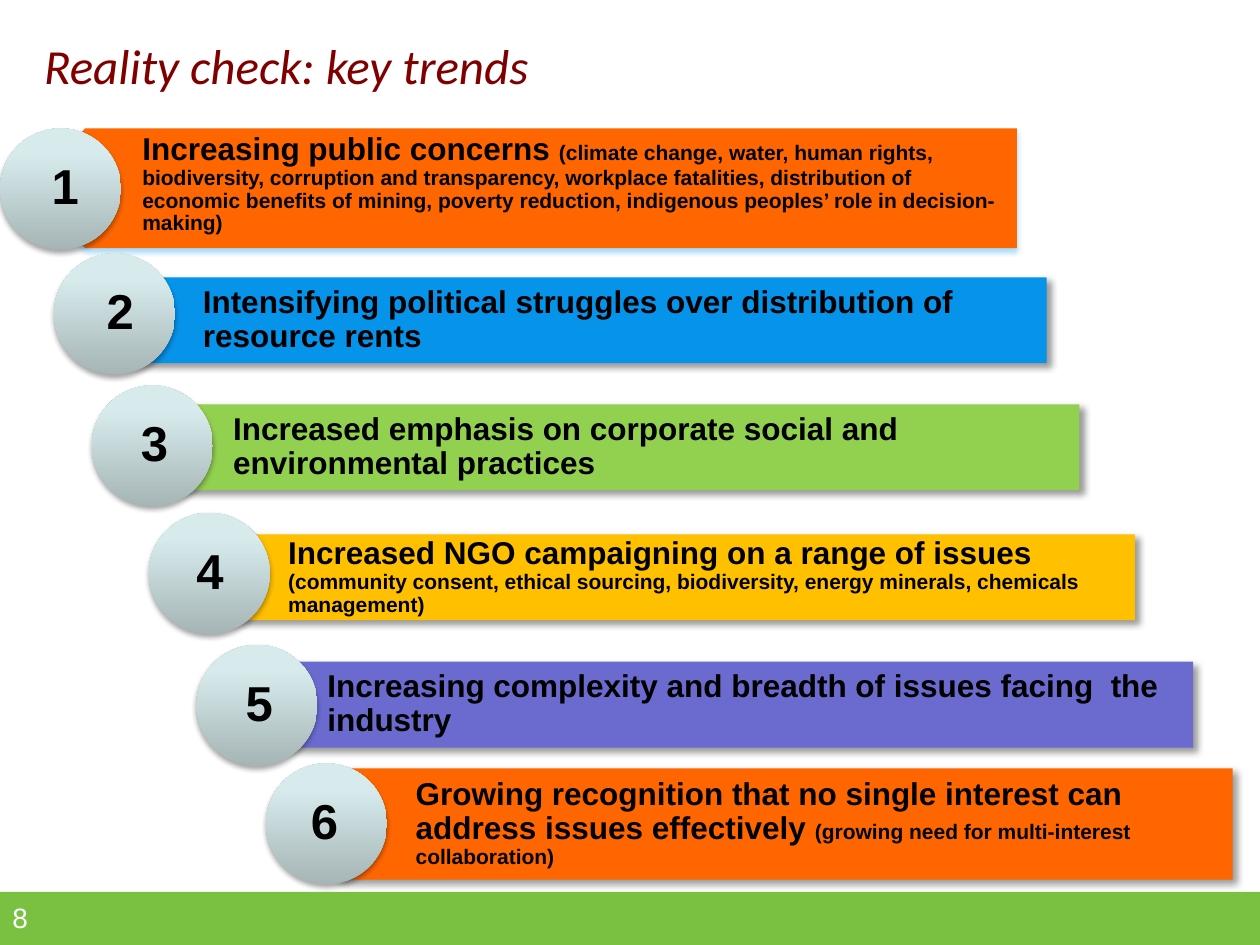
from lxml import etree
from pptx import Presentation
from pptx.dml.color import RGBColor
from pptx.enum import shapes, text
from pptx.oxml import ns
from pptx.util import Cm, Pt

BLACK = RGBColor(0x00, 0x00, 0x00)
WHITE = RGBColor(0xFF, 0xFF, 0xFF)
MAROON = RGBColor(0x80, 0x00, 0x00)
GREEN = RGBColor(0x7A, 0xC1, 0x42)
ORANGE = RGBColor(0xFF, 0x66, 0x00)
BLUE = RGBColor(0x06, 0x93, 0xEA)
LIME = RGBColor(0x92, 0xD0, 0x50)
AMBER = RGBColor(0xFF, 0xC0, 0x00)
VIOLET = RGBColor(0x6B, 0x6B, 0xCF)
STEEL = RGBColor(0xA6, 0xB5, 0xB6)
ICE = RGBColor(0xD7, 0xEB, 0xED)

DISC = 2.44  # diameter in cm

# colour, bar (left, top, width, height), text (left, top, right, inset),
# disc (left, top), digit left, headline, detail
ROWS = [
    (ORANGE, (0.51, 2.59, 19.99, 2.41), (1.9, 2.51, 20.75, 0.97), (0, 2.59), 0.79,
     "Increasing public concerns ",
     "(climate change, water, human rights, biodiversity, corruption and "
     "transparency, workplace fatalities, distribution of economic benefits of "
     "mining, poverty reduction, indigenous peoples’ role in decision-making)"),
    (BLUE, (1.57, 5.59, 19.53, 1.73), (2.01, 5.59, 21.1, 2.08), (1.09, 5.11), 1.9,
     "Intensifying political struggles over distribution of resource rents", ""),
    (LIME, (2.18, 8.15, 19.58, 1.73), (2.62, 8.15, 21.76, 2.08), (1.85, 7.77), 2.59,
     "Increased emphasis on corporate social and environmental practices", ""),
    (AMBER, (3.3, 10.77, 19.58, 1.73), (3.73, 10.77, 22.88, 2.08), (3, 10.34), 3.71,
     "Increased NGO campaigning on a range of issues ",
     "(community consent, ethical sourcing, biodiversity, energy minerals, "
     "chemicals management)"),
    (VIOLET, (4.09, 13.34, 19.96, 1.73), (4.52, 13.34, 24.05, 2.08), (3.96, 13), 4.7,
     "Increasing complexity and breadth of issues facing  the industry", ""),
    (ORANGE, (5.72, 15.49, 19.13, 2.24), (6.3, 15.49, 24.85, 2.08), (5.36, 15.39), 6.02,
     "Growing recognition that no single interest can address issues effectively ",
     "(growing need for multi-interest collaboration)"),
]


def shade(shape, color, alpha, blur, dist, angle):
    """Give a shape an outer shadow; blur and distance are in points."""
    shape.shadow.inherit = False
    effects = shape._element.spPr.find(ns.qn("a:effectLst"))
    outer = etree.SubElement(
        effects, ns.qn("a:outerShdw"), blurRad=str(Pt(blur)), dist=str(Pt(dist)),
        dir=str(angle * 60000), algn="ctr", rotWithShape="0")
    tone = etree.SubElement(outer, ns.qn("a:srgbClr"), val=str(color))
    etree.SubElement(tone, ns.qn("a:alpha"), val=str(alpha * 1000))


def write(box, words, size, color, bold):
    """Fill the first paragraph of a text box and return it."""
    para = box.text_frame.paragraphs[0]
    para.add_run().text = words
    para.font.name, para.font.size = "Arial", Pt(size)
    para.font.color.rgb, para.font.bold = color, bold
    return para


deck = Presentation()
deck.slide_width, deck.slide_height = Cm(25.4), Cm(19.05)
slide = deck.slides.add_slide(deck.slide_layouts[5])
parts = slide.shapes

# Footer band
band = parts.add_shape(shapes.MSO_SHAPE.RECTANGLE, 0, Cm(17.98), Cm(25.4), Cm(1.07))
band.fill.solid()
band.fill.fore_color.rgb = GREEN
band.line.fill.background()
band.shadow.inherit = False

# Title
title = parts.title
title.left, title.top, title.width, title.height = Cm(0.89), Cm(0.71), Cm(22.91), Cm(2.03)
frame = title.text_frame
frame.text = "Reality check: key trends"
frame.vertical_anchor = text.MSO_ANCHOR.TOP
frame.margin_left = frame.margin_top = frame.margin_right = frame.margin_bottom = 0
para = frame.paragraphs[0]
para.alignment = text.PP_ALIGN.LEFT
para.font.name, para.font.size = "Calibri", Pt(28)
para.font.italic, para.font.color.rgb = True, MAROON

# Numbered trends
for num, (color, plate, area, spot, digit, head, detail) in enumerate(ROWS, 1):
    # Bar pointing left
    bar = parts.add_shape(shapes.MSO_SHAPE.PENTAGON, *map(Cm, plate))
    bar.rotation = 180
    bar.fill.solid()
    bar.fill.fore_color.rgb = color
    bar.line.fill.background()
    if num == 1:
        shade(bar, BLUE, 35, 3.1, 1.8, 90)
    else:
        shade(bar, BLACK, 40, 4, 3, 45)

    # Wording
    left, top, right, inset = area
    box = parts.add_textbox(Cm(left), Cm(top), Cm(right - left), Cm(plate[3]))
    frame = box.text_frame
    frame.word_wrap = True
    frame.vertical_anchor = text.MSO_ANCHOR.MIDDLE
    frame.margin_left, frame.margin_right = Cm(inset), Cm(0.36)
    frame.margin_top = frame.margin_bottom = Cm(0.18)
    para = write(box, head, 18, BLACK, True)
    para.line_spacing = 0.9
    if detail:
        run = para.add_run()
        run.text = detail
        run.font.size = Pt(12)

    # Disc
    disc = parts.add_shape(shapes.MSO_SHAPE.OVAL, *map(Cm, spot), Cm(DISC), Cm(DISC))
    disc.fill.gradient()
    disc.fill.gradient_angle = 90
    for stop, tint, place in zip(disc.fill.gradient_stops, (STEEL, ICE), (0, 0.8)):
        stop.color.rgb, stop.position = tint, place
    disc.line.fill.background()
    shade(disc, BLACK, 35, 3.1, 1.8, 90)

    # Digit
    mark = parts.add_textbox(Cm(digit), Cm(spot[1] + 0.43), Cm(1.07), Cm(1.45))
    write(mark, str(num), 28, BLACK, True)

# Page number
page = parts.add_textbox(0, Cm(18.03), Cm(5.92), Cm(1.02))
write(page, "8", 16, WHITE, False)

deck.save("out.pptx")
